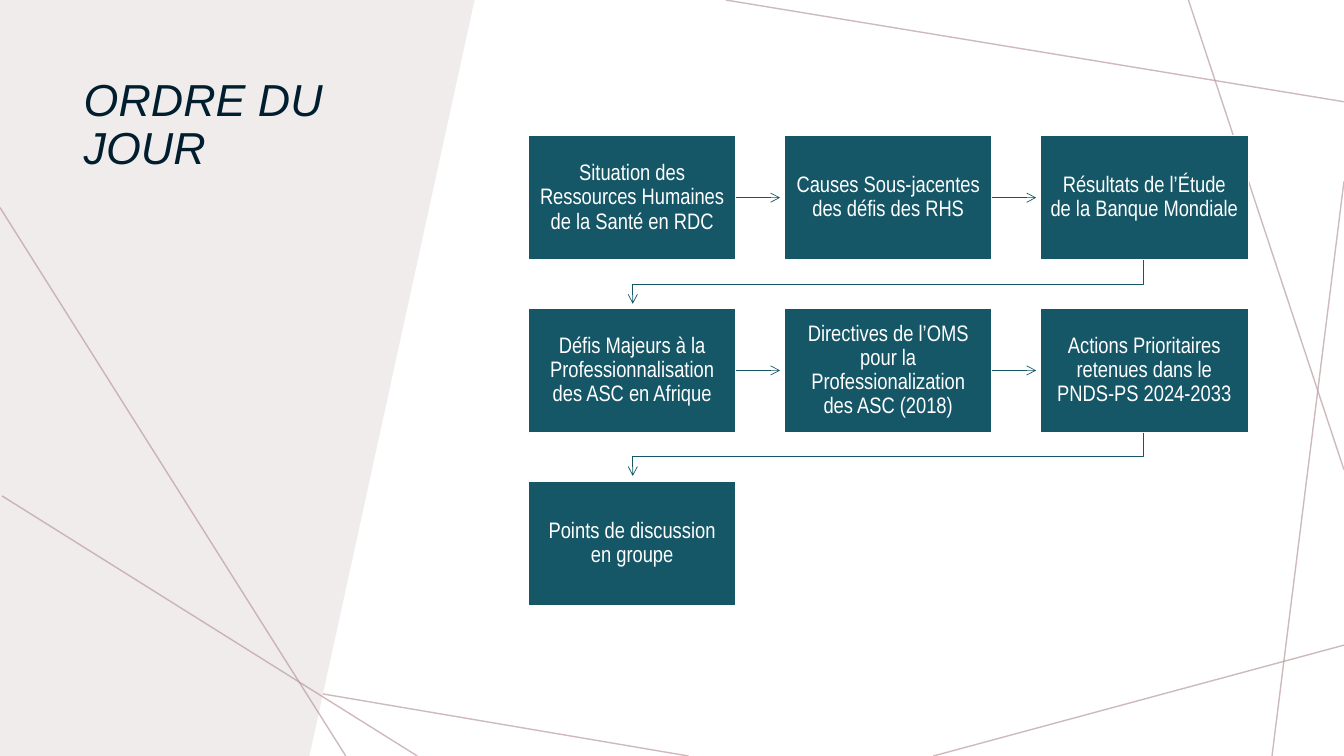
"""Builds the agenda slide with its chain of seven topics."""
import lxml.etree
import pptx
import pptx.dml.color
import pptx.enum.shapes
import pptx.enum.text
import pptx.oxml.ns
import pptx.util

Pt = pptx.util.Pt
qn = pptx.oxml.ns.qn


def colour(hex_value):
    return pptx.dml.color.RGBColor.from_string(hex_value)


class AgendaSlide:
    INK, PANEL, TEAL, ROSE, WHITE = "001E2E", "F0ECEC", "155767", "BA9CA0", "FFFFFF"

    def __init__(self, deck):
        self.slide = deck.slides.add_slide(deck.slide_layouts[5])
        self.shapes = self.slide.shapes

    def stroke(self, line, hex_value, width):
        line.color.rgb = colour(hex_value)
        line.width = Pt(width)

    def arrowhead(self, shape):
        outline = shape._element.spPr.find(qn("a:ln"))
        lxml.etree.SubElement(outline, qn("a:tailEnd"), type="arrow")

    def connector(self, start, end, hex_value, width):
        link = self.shapes.add_connector(
            pptx.enum.shapes.MSO_CONNECTOR.STRAIGHT, *map(Pt, start + end))
        self.stroke(link.line, hex_value, width)
        lxml.etree.SubElement(link._element.spPr, qn("a:effectLst"))
        return link

    def decoration(self, start, end):
        link = self.connector(start, end, self.ROSE, 1)
        tint = link._element.spPr.find(".//" + qn("a:srgbClr"))
        lxml.etree.SubElement(tint, qn("a:alpha"), val="70000")

    def outline(self, points, closed):
        builder = self.shapes.build_freeform(*points[0], scale=float(Pt(1)))
        builder.add_line_segments(points[1:], close=closed)
        shape = builder.convert_to_shape()
        shape.shadow.inherit = False
        return shape

    def panel(self, points):
        shape = self.outline(points, True)
        shape.fill.solid()
        shape.fill.fore_color.rgb = colour(self.PANEL)
        shape.line.fill.background()

    def return_arrow(self, points):
        shape = self.outline(points, False)
        shape.fill.background()
        self.stroke(shape.line, self.TEAL, 0.5)
        self.arrowhead(shape)

    def next_arrow(self, topic, start, end):
        link = self.connector(start, end, self.TEAL, 0.5)
        link.begin_connect(topic, 3)
        self.arrowhead(link)

    def set_text(self, frame, text, font_name, size, hex_value, align):
        frame.text = text
        frame.word_wrap = True
        frame.auto_size = pptx.enum.text.MSO_AUTO_SIZE.NONE
        paragraph = frame.paragraphs[0]
        paragraph.alignment = align
        paragraph.line_spacing = 0.9
        paragraph.font.name = font_name
        paragraph.font.size = Pt(size)
        paragraph.font.color.rgb = colour(hex_value)
        return paragraph

    def title(self, text, left, top, width, height):
        heading = self.shapes.title
        heading.left, heading.top = Pt(left), Pt(top)
        heading.width, heading.height = Pt(width), Pt(height)
        heading.text_frame.vertical_anchor = pptx.enum.text.MSO_ANCHOR.TOP
        paragraph = self.set_text(heading.text_frame, text, "Arial", 32, self.INK,
                                  pptx.enum.text.PP_ALIGN.LEFT)
        paragraph.font.italic = True

    def topic(self, text, left, top, width, height):
        box = self.shapes.add_shape(pptx.enum.shapes.MSO_SHAPE.RECTANGLE,
                                    Pt(left), Pt(top), Pt(width), Pt(height))
        box.shadow.inherit = False
        box.fill.solid()
        box.fill.fore_color.rgb = colour(self.TEAL)
        self.stroke(box.line, self.WHITE, 1)
        frame = box.text_frame
        frame.vertical_anchor = pptx.enum.text.MSO_ANCHOR.MIDDLE
        frame.margin_left = frame.margin_right = Pt(7.2)
        frame.margin_top = frame.margin_bottom = Pt(7.7)
        self.set_text(frame, text, "Arial Narrow", 16, self.WHITE,
                      pptx.enum.text.PP_ALIGN.CENTER)
        return box


TOPICS = [
    "Situation des Ressources Humaines de la Santé en RDC",
    "Causes Sous-jacentes des défis des RHS",
    "Résultats de l’Étude de la Banque Mondiale",
    "Défis Majeurs à la Professionnalisation des ASC en Afrique",
    "Directives de l’OMS pour la Professionalization des ASC (2018)",
    "Actions Prioritaires retenues dans le PNDS-PS 2024-2033",
    "Points de discussion en groupe",
]
BACK_LINES = [
    ((245.5, 0), (0, 54)), ((71.3, 0), (0, 515.5)), ((491.8, 540), (0, 456.5)),
    ((960, 460.8), (666.7, 540)), ((960, 129.6), (908.6, 540)),
    ((960, 335.5), (848.9, 0)), ((960, 72.7), (518.4, 0)),
]
FRONT_LINES = [((298.1, 540), (1.4, 354.2)), ((0, 148.3), (247, 540))]
COLUMNS = 3
LEFT, TOP = 377.3, 96.7
WIDTH, HEIGHT = 148.5, 89
STEP_X, STEP_Y = 182.9, 123.4
TIP_GAP = 3


def main():
    deck = pptx.Presentation()
    deck.slide_width, deck.slide_height = Pt(960), Pt(540)
    agenda = AgendaSlide(deck)

    for start, end in BACK_LINES:
        agenda.decoration(start, end)
    agenda.panel([(0, 0), (339.1, 0), (221, 540), (0, 540)])
    agenda.title("ORDRE DU JOUR", 52.6, 51.8, 233.3, 229.7)
    for start, end in FRONT_LINES:
        agenda.decoration(start, end)

    # The title placeholder is created first, so it is raised above the panel.
    heading = agenda.shapes.title._element
    heading.getparent().append(heading)

    for index, text in enumerate(TOPICS):
        row, column = divmod(index, COLUMNS)
        left, top = LEFT + column * STEP_X, TOP + row * STEP_Y
        topic = agenda.topic(text, left, top, WIDTH, HEIGHT)
        if index == len(TOPICS) - 1:
            continue
        if column < COLUMNS - 1:
            middle = top + HEIGHT / 2
            agenda.next_arrow(topic, (left + WIDTH, middle),
                              (left + STEP_X - TIP_GAP, middle))
        else:
            centre, first_centre = left + WIDTH / 2, LEFT + WIDTH / 2
            bottom, next_top = top + HEIGHT, top + STEP_Y
            turn = (bottom + next_top) / 2
            agenda.return_arrow([(centre, bottom), (centre, turn),
                                 (first_centre, turn),
                                 (first_centre, next_top - TIP_GAP)])

    deck.save("out.pptx")


if __name__ == "__main__":
    main()
